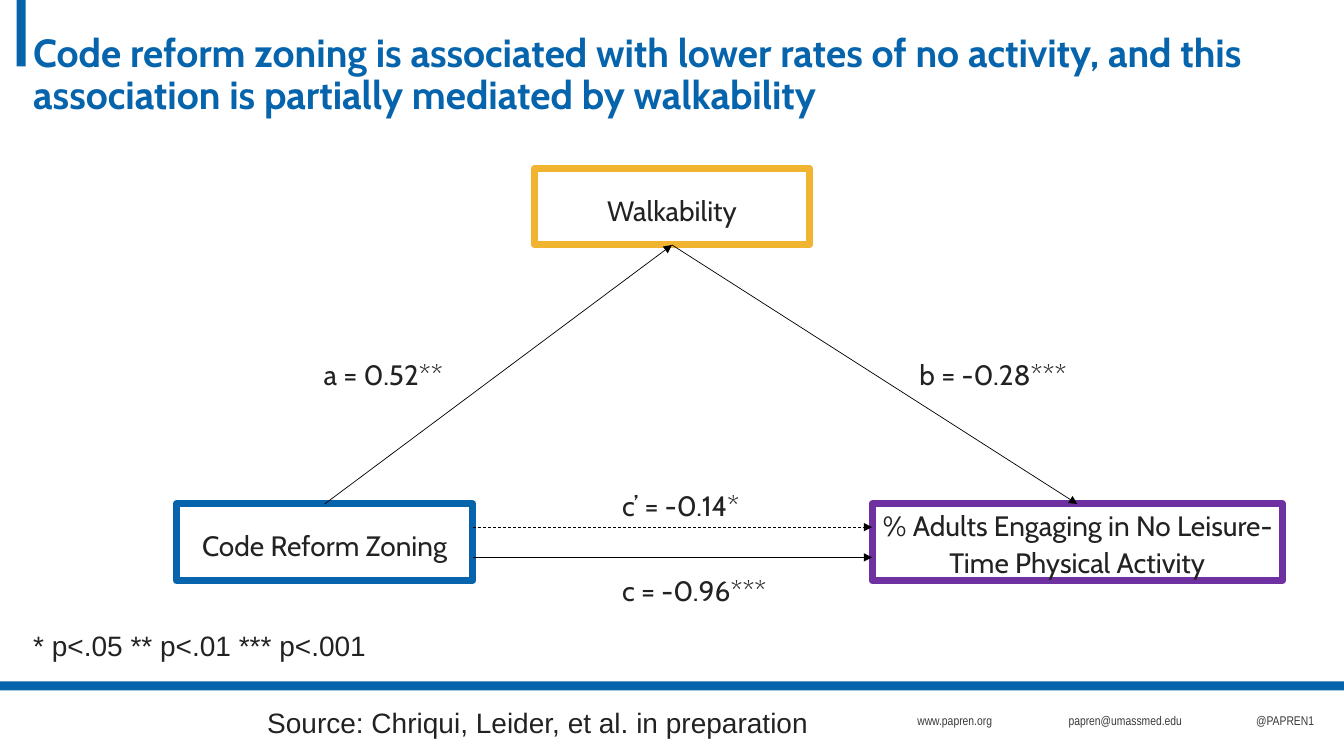
from lxml import etree
from pptx import Presentation
from pptx.dml.color import RGBColor
from pptx.enum.dml import MSO_LINE
from pptx.enum.shapes import MSO_CONNECTOR, MSO_SHAPE
from pptx.enum.text import MSO_ANCHOR, MSO_AUTO_SIZE, PP_ALIGN
from pptx.oxml.ns import qn
from pptx.util import Inches, Pt

RECT = MSO_SHAPE.RECTANGLE
STRAIGHT = MSO_CONNECTOR.STRAIGHT
DASH = MSO_LINE.DASH
MIDDLE = MSO_ANCHOR.MIDDLE
CENTER = PP_ALIGN.CENTER
GROW = MSO_AUTO_SIZE.SHAPE_TO_FIT_TEXT
TOP, BOTTOM = 0, 2

SLIDE_W, SLIDE_H = 13.33, 7.5
BLUE, GOLD, PURPLE = "0564AC", "F1B431", "6F31A1"
WHITE, BLACK, INK, GREY = "FFFFFF", "000000", "222222", "383A3A"
BOX_H = 0.76


def color(value):
    return RGBColor.from_string(value)


def write(sp, text, size=20, font="Cabin", ink=INK, bold=False,
          spacing=1.2, wrap=True, inset=0):
    tf = sp.text_frame
    tf.text = text
    tf.word_wrap = wrap
    if inset is not None:
        tf.margin_left = tf.margin_right = Inches(inset)
        tf.margin_top = tf.margin_bottom = Inches(inset)
    p = tf.paragraphs[0]
    p.line_spacing = spacing
    f = p.runs[0].font
    f.size, f.name, f.bold = Pt(size), font, bold
    f.color.rgb = color(ink)
    return tf


def add_text(slide, box, text, **style):
    sp = slide.shapes.add_textbox(*map(Inches, box))
    return write(sp, text, **style)


def add_rect(slide, box, fill=None, line=None):
    sp = slide.shapes.add_shape(RECT, *map(Inches, box))
    sp.shadow.inherit = False
    if fill:
        sp.fill.solid()
        sp.fill.fore_color.rgb = color(fill)
    else:
        sp.fill.background()
    if line:
        sp.line.color.rgb = color(line)
        sp.line.width = Pt(5)
    else:
        sp.line.fill.background()
    return sp


def add_node(slide, box, text, line, fill=None, spacing=1.2):
    sp = add_rect(slide, box, fill, line)
    tf = write(sp, text, spacing=spacing)
    tf.vertical_anchor = MIDDLE
    tf.paragraphs[0].alignment = CENTER
    return sp


def add_arrow(slide, start=(0, 0), end=(0, 0), dash=None):
    sp = slide.shapes.add_connector(STRAIGHT, *map(Inches, start + end))
    sp.line.color.rgb = color(BLACK)
    sp.line.width = Pt(0.5)
    if dash:
        sp.line.dash_style = dash
    ln = sp.line._get_or_add_ln()
    etree.SubElement(ln, qn("a:tailEnd"), type="triangle")
    etree.SubElement(sp._element.spPr, qn("a:effectLst"))
    return sp


def join(slide, source, source_side, target, target_side):
    arrow = add_arrow(slide)
    arrow.begin_connect(source, source_side)
    arrow.end_connect(target, target_side)


def add_footer(slide, top):
    add_rect(slide, (0, top, SLIDE_W, 0.09), BLUE)
    contacts = [(9, 0.96, "www.papren.org"),
                (10.5, 1.34, "papren@umassmed.edu"),
                (12.36, 0.79, "@PAPREN1")]
    for left, width, text in contacts:
        tf = add_text(slide, (left, top + 0.26, width, 0.25), text, size=9,
                      font="Arial Narrow", ink=GREY, spacing=1, wrap=False,
                      inset=None)
        tf.auto_size = GROW
    add_text(slide, (2.65, top + 0.17, 5.6, 0.4),
             "Source: Chriqui, Leider, et al. in preparation", font="Arial")


def add_title(slide, left, top):
    add_rect(slide, (left / 2, 0, 0.09, 0.66), BLUE)
    add_text(slide, (left, top, SLIDE_W - 2 * left, 0.85),
             "Code reform zoning is associated with lower rates of no activity, "
             "and this association is partially mediated by walkability",
             size=28, ink=BLUE, bold=True, spacing=0.9)


def add_mediation(slide, left, top, width, height):
    """Draw the mediator above, with cause and outcome at the lower corners."""
    right, base = left + width, top + height - BOX_H
    cause_w, mediator_w, outcome_w = 2.94, 2.73, 4.07
    outcome_left = right - outcome_w
    cause = add_node(slide, (left, base, cause_w, BOX_H),
                     "Code Reform Zoning", BLUE, WHITE)
    mediator = add_node(slide, ((SLIDE_W - mediator_w) / 2, top, mediator_w, BOX_H),
                        "Walkability", GOLD)
    outcome = add_node(slide, (outcome_left, base, outcome_w, BOX_H),
                       "% Adults Engaging in No Leisure-Time Physical Activity",
                       PURPLE, spacing=1.1)
    join(slide, cause, TOP, mediator, BOTTOM)
    join(slide, mediator, BOTTOM, outcome, TOP)
    for drop, dash in ((0.53, None), (0.23, DASH)):
        y = base + drop
        add_arrow(slide, (left + cause_w, y), (outcome_left, y), dash)

    labels = [(6.17, base + 0.62, "c = -0.96***"),
              (9.12, base - 1.52, "b = -0.28***"),
              (3.21, base - 1.52, "a = 0.52**"),
              (6.17, base - 0.22, "c’ = -0.14*")]
    for x, y, text in labels:
        add_text(slide, (x, y, 1.6, 0.41), text)


def main():
    prs = Presentation()
    prs.slide_width, prs.slide_height = Inches(SLIDE_W), Inches(SLIDE_H)
    slide = prs.slides.add_slide(prs.slide_layouts[6])
    add_footer(slide, 6.76)
    add_title(slide, 0.33, 0.33)
    add_mediation(slide, 1.75, 1.67, 10.97, 4.09)
    add_text(slide, (0.33, 6.17, 3.6, 0.41), "* p<.05 ** p<.01 *** p<.001",
             font="Arial")
    prs.save("out.pptx")


if __name__ == "__main__":
    main()
